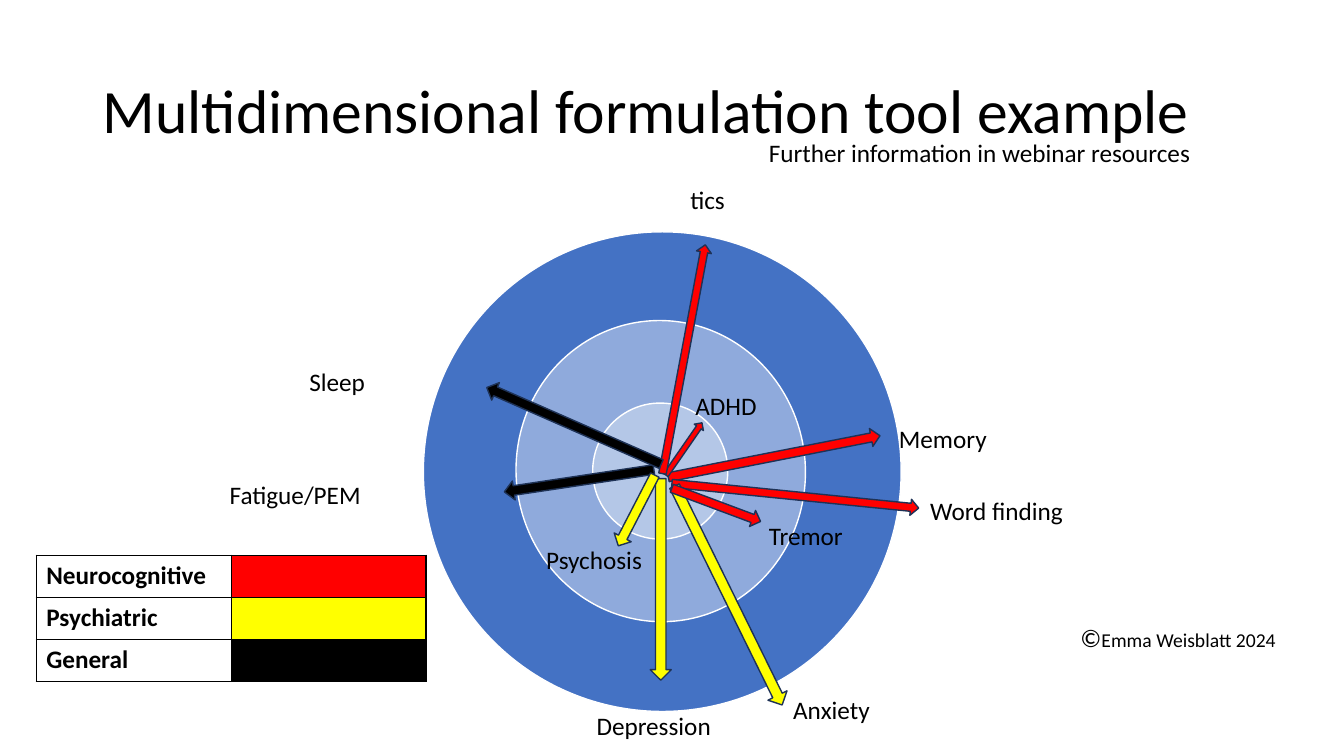
from typing import NamedTuple

from lxml import etree
from pptx import Presentation
from pptx.dml import color
from pptx.enum import shapes, text
from pptx.oxml import ns
from pptx import util as u

# The page is a grid of 160 columns by 90 rows of square cells
COLUMNS = 160
PAGE_WIDTH, PAGE_HEIGHT = u.Inches(13.33), u.Inches(7.5)
FONT = "Calibri"
BLACK, WHITE, RED, YELLOW = "000000", "FFFFFF", "FF0000", "FFFF00"
ARROW_EDGE = "1E3256"


class Mark(NamedTuple):
    """A preset shape placed by its centre and turned clockwise."""
    centre_x: float
    centre_y: float
    width: float
    height: float
    turn: float
    fill: str


class Label(NamedTuple):
    wording: str
    left: float
    top: float
    width: float
    height: float = 4.8
    size: float = 18


class Category(NamedTuple):
    name: str
    fill: str


RINGS = [
    Mark(78.84, 56.16, 56.88, 57.12, 0, "4472C4"),
    Mark(78.66, 56.1, 34.44, 35.88, -5.9, "8FAADC"),
    Mark(78.6, 56.1, 16.08, 16.2, -5.9, "B4C7E7"),
]

ARROWS = [
    Mark(92.16, 54.36, 2.16, 25.68, 78.9, RED),       # Memory
    Mark(81.42, 53.46, 1.32, 7.56, 34.7, RED),        # ADHD
    Mark(94.68, 59.04, 1.92, 29.52, 95.7, RED),       # Word finding
    Mark(86.7, 70.92, 2.52, 29.04, 153.8, YELLOW),    # Anxiety
    Mark(68.94, 57.24, 2.28, 18, 261.5, BLACK),       # Fatigue/PEM
    Mark(85.26, 60.12, 2.04, 11.28, 110.5, RED),      # Tremor
    Mark(81.42, 42.78, 1.8, 27.72, 10.6, RED),        # tics
    Mark(78.66, 69, 2.52, 24, 180, YELLOW),           # Depression
    Mark(75.78, 60.78, 2.28, 9.48, 207.3, YELLOW),    # Psychosis
    Mark(68.34, 50.7, 2.28, 22.68, 293.7, BLACK),     # Sleep
]

TITLE = Label("Multidimensional formulation tool example", 11.04, 4.8, 138, 17.4, 44)
LABELS = [
    Label("tics", 81, 21.36, 7.56),
    Label("ADHD", 81.6, 45.84, 9.96),
    Label("Memory", 105.84, 49.8, 15),
    Label("Word finding", 109.56, 58.44, 22.92),
    Label("Anxiety", 93.24, 82.08, 11.76),
    Label("Tremor", 90.36, 61.32, 11.88),
    Label("Depression", 69.84, 84, 16.32),
    Label("Psychosis", 63.84, 64.2, 16.32),
    Label("Fatigue/PEM", 26.16, 56.52, 22.8, 8.52),
    Label("Sleep", 35.64, 43.08, 15.12),
    Label("Further information in webinar resources", 90.36, 15.72, 58.2),
]
COPYRIGHT = Label("©", 127.44, 73.56, 25.92)

CATEGORIES = [
    Category("Neurocognitive", RED),
    Category("Psychiatric", YELLOW),
    Category("General", BLACK),
]


def cells(count: float) -> int:
    return round(count * PAGE_WIDTH / COLUMNS)


def paint(format_part, colour: str) -> None:
    """Give a fill or a font a solid colour."""
    if hasattr(format_part, "solid"):
        format_part.solid()
        format_part.fore_color.rgb = color.RGBColor.from_string(colour)
    else:
        format_part.color.rgb = color.RGBColor.from_string(colour)


def style(para, size: float, bold: bool = False) -> None:
    para.font.name = FONT
    para.font.size = u.Pt(size)
    para.font.bold = bold
    paint(para.font, BLACK)


def draw_mark(page, preset, mark: Mark, edge: str) -> None:
    shape = page.shapes.add_shape(
        preset,
        cells(mark.centre_x - mark.width / 2), cells(mark.centre_y - mark.height / 2),
        cells(mark.width), cells(mark.height))
    shape.rotation = mark.turn
    shape.shadow.inherit = False
    paint(shape.fill, mark.fill)
    paint(shape.line.fill, edge)
    shape.line.width = u.Pt(1)


def draw_label(page, label: Label, wrap: bool = True):
    box = page.shapes.add_textbox(
        cells(label.left), cells(label.top), cells(label.width), cells(label.height))
    box.text_frame.word_wrap = wrap
    para = box.text_frame.paragraphs[0]
    para.add_run().text = label.wording
    style(para, label.size)
    return box


def draw_border(cell) -> None:
    properties = cell._tc.get_or_add_tcPr()
    for place, side in enumerate(("lnL", "lnR", "lnT", "lnB")):
        line = etree.Element(ns.qn(f"a:{side}"), w=str(u.Pt(1)))
        solid = etree.SubElement(line, ns.qn("a:solidFill"))
        etree.SubElement(solid, ns.qn("a:srgbClr"), val=BLACK)
        properties.insert(place, line)


def draw_key(page, categories: list[Category]) -> None:
    column, row = cells(23.2), cells(5)
    table = page.shapes.add_table(
        len(categories), 2, cells(4.32), cells(66.12),
        2 * column, len(categories) * row).table
    for index, category in enumerate(categories):
        name, swatch = table.cell(index, 0), table.cell(index, 1)
        name.text = category.name
        style(name.text_frame.paragraphs[0], 18, bold=True)
        for cell, fill in ((name, WHITE), (swatch, category.fill)):
            paint(cell.fill, fill)
            draw_border(cell)


def main() -> None:
    deck = Presentation()
    deck.slide_width, deck.slide_height = PAGE_WIDTH, PAGE_HEIGHT
    page = deck.slides.add_slide(deck.slide_layouts[6])

    # Title
    title = draw_label(page, TITLE)
    title.text_frame.vertical_anchor = text.MSO_ANCHOR.MIDDLE
    title.text_frame.paragraphs[0].line_spacing = 0.9

    # Rings with arrows
    for ring in RINGS:
        draw_mark(page, shapes.MSO_SHAPE.OVAL, ring, WHITE)
    for arrow in ARROWS:
        draw_mark(page, shapes.MSO_SHAPE.UP_ARROW, arrow, ARROW_EDGE)

    # Colour key
    draw_key(page, CATEGORIES)

    # Labels and copyright line
    for label in LABELS:
        draw_label(page, label)
    notice = draw_label(page, COPYRIGHT, wrap=False)
    span = notice.text_frame.paragraphs[0].add_run()
    span.text = "Emma Weisblatt 2024"
    span.font.size = u.Pt(14)

    deck.save("out.pptx")


if __name__ == "__main__":
    main()
